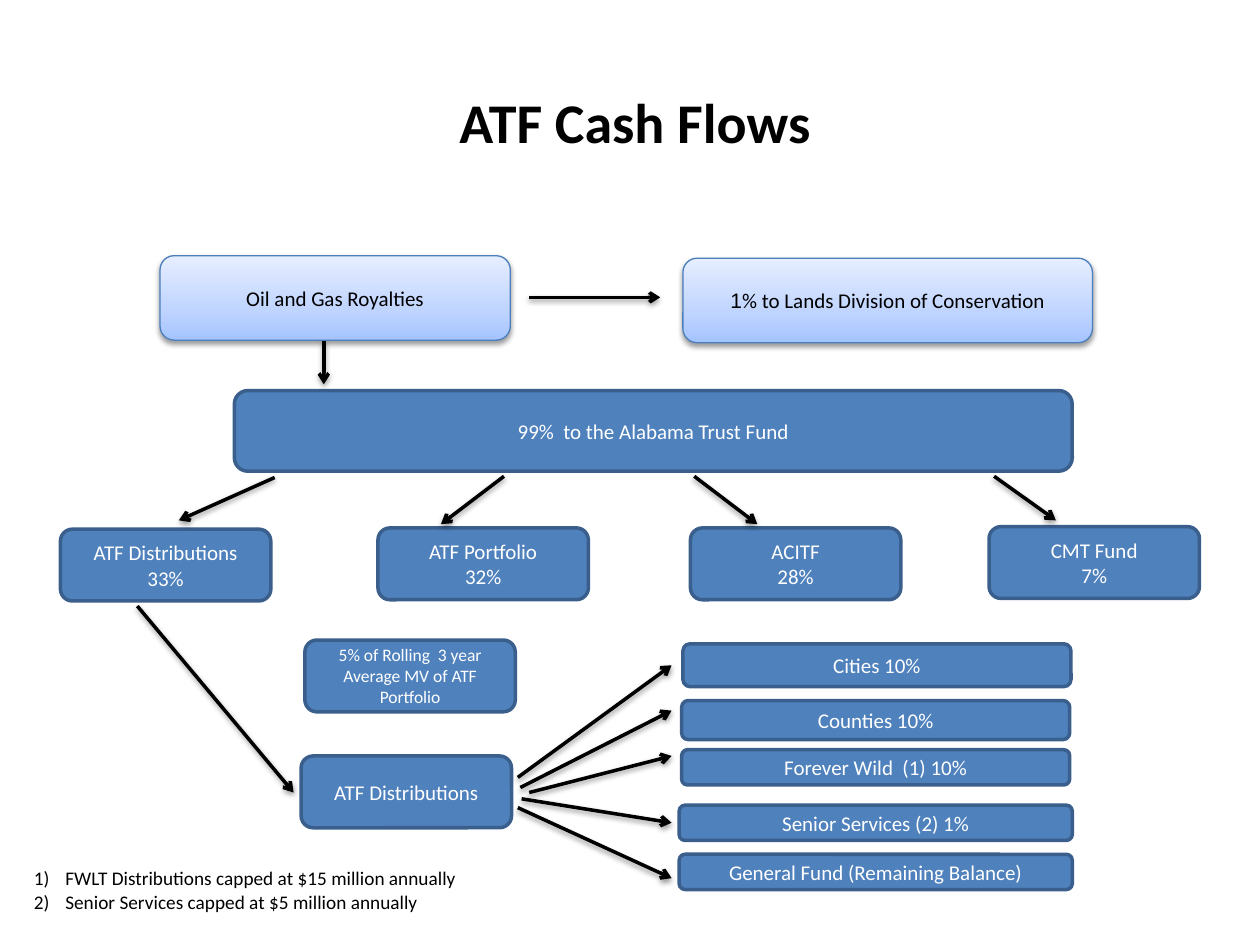
import copy
from dataclasses import dataclass

import lxml.etree
import pptx
import pptx.dml.color
import pptx.enum.dml
import pptx.enum.shapes
import pptx.enum.text
import pptx.oxml
import pptx.oxml.ns
import pptx.util

WIDTH, HEIGHT = pptx.util.Inches(10), pptx.util.Inches(7.5)
COLUMNS, ROWS = 100, 75
BLACK, WHITE, BLUE, NAVY, SKY = "000000", "FFFFFF", "4F81BD", "3A5F8C", "4B7EBC"
SOFT_STOPS = [(0, "A4C4FF"), (0.35, "BFD4FF"), (1, "E6EEFF")]
SHADOW = (
    f'<a:outerShdw {pptx.oxml.ns.nsdecls("a")} blurRad="40000" dist="20000" '
    'dir="5400000" rotWithShape="0"><a:srgbClr val="000000">'
    '<a:alpha val="38000"/></a:srgbClr></a:outerShdw>'
)


@dataclass(frozen=True)
class Box:
    text: str
    left: float
    top: float
    width: float = 16.7
    height: float = 5.7
    size: int = 12
    soft: bool = False
    lead: str = ""


@dataclass(frozen=True)
class Arrow:
    start_column: float
    start_row: float
    end_column: float
    end_row: float


FUND_BOXES = [
    Box("ATF Distributions\n33%", 4.8, 42),
    Box("ATF Portfolio\n32%", 30, 41.9),
    Box("ACITF\n28%", 54.8, 41.9),
    Box("CMT Fund\n7%", 78.5, 41.8),
]
RECIPIENT_BOXES = [
    Box("Cities 10%", 54.2, 51.1, 30.8, 3.4),
    Box("Counties 10%", 54.1, 55.6, 30.8, 3.1),
    Box("Forever Wild  (1) 10%", 54.1, 59.5, 30.8, 2.8),
    Box("Senior Services (2) 1%", 53.9, 63.9, 31.2, 2.8),
    Box("General Fund (Remaining Balance)", 53.9, 67.8, 31.2, 2.8),
]
BOXES = [
    Box("Oil and Gas Royalties", 12.7, 20.3, 27.8, 6.7, soft=True),
    Box("% to Lands Division of Conservation", 54.2, 20.5, 32.5, 6.7, soft=True, lead="1"),
    Box("99%  to the Alabama Trust Fund", 18.6, 31, 66.5, 6.4),
    *FUND_BOXES,
    Box("5% of Rolling  3 year Average MV of ATF Portfolio", 24.2, 50.8, size=10),
    Box("ATF Distributions", 23.9, 60),
    *RECIPIENT_BOXES,
]
ROYALTY_ARROWS = [Arrow(42, 23.6, 52.4, 23.6), Arrow(25.7, 27.1, 25.7, 30.5)]
FUND_ARROWS = [
    Arrow(21.8, 37.9, 14.2, 41.3),
    Arrow(40, 37.8, 35, 41.6),
    Arrow(55.1, 37.8, 60.1, 41.6),
    Arrow(78.9, 37.8, 83.8, 41.3),
]
PAYOUT_ARROW = Arrow(10.9, 48.1, 23.3, 62.9)
RECIPIENT_COLUMN = 53.3
RECIPIENT_ARROWS = [
    Arrow(column, row, RECIPIENT_COLUMN, end_row)
    for column, row, end_row in [
        (41.1, 61.7, 52.8),
        (41.3, 62.5, 56.4),
        (42, 62.9, 60),
        (41.4, 63.4, 65.3),
        (41.1, 64.1, 69.7),
    ]
]


def across(columns: float) -> int:
    return round(WIDTH * columns / COLUMNS)


def down(rows: float) -> int:
    return round(HEIGHT * rows / ROWS)


def color(value: str) -> pptx.dml.color.RGBColor:
    return pptx.dml.color.RGBColor.from_string(value)


def write(frame, text: str, *, size: int, ink: str = BLACK, bold: bool = False,
          centered: bool = True, lead: str = "", numbered: bool = False) -> None:
    frame.word_wrap = True
    for index, line in enumerate(text.split("\n")):
        para = frame.paragraphs[0] if index == 0 else frame.add_paragraph()
        if centered:
            para.alignment = pptx.enum.text.PP_ALIGN.CENTER
        for words, font in [(lead, "Arial"), (line, "Calibri")]:
            if words:
                span = para.add_run()
                span.text = words
                span.font.name = font
                span.font.size = pptx.util.Pt(size)
                span.font.bold = bold
                span.font.color.rgb = color(ink)
        if numbered:
            settings = para._p.get_or_add_pPr()
            indent = pptx.util.Inches(0.25)
            settings.set("marL", str(indent))
            settings.set("indent", str(-indent))
            number = lxml.etree.SubElement(settings, pptx.oxml.ns.qn("a:buAutoNum"))
            number.set("type", "arabicParenR")


def add_shadow(effects) -> None:
    effects.append(pptx.oxml.parse_xml(SHADOW))


def fill_softly(shape) -> None:
    shape.fill.gradient()
    stops = shape._element.spPr.find(".//" + pptx.oxml.ns.qn("a:gsLst"))
    stops.insert(1, copy.deepcopy(stops[0]))
    for stop, (position, value) in zip(shape.fill.gradient_stops, SOFT_STOPS):
        stop.position = position
        stop.color.rgb = color(value)
    shape.fill.gradient_angle = 90


def draw_box(page, box: Box) -> None:
    shape = page.shapes.add_shape(
        pptx.enum.shapes.MSO_SHAPE.ROUNDED_RECTANGLE,
        across(box.left), down(box.top), across(box.width), down(box.height))
    if box.soft:
        fill_softly(shape)
    else:
        shape.fill.solid()
        shape.fill.fore_color.rgb = color(BLUE)
    shape.line.color.rgb = color(SKY if box.soft else NAVY)
    shape.line.width = pptx.util.Pt(0.75 if box.soft else 2)
    shape.shadow.inherit = False
    if box.soft:
        add_shadow(shape._element.spPr.find(pptx.oxml.ns.qn("a:effectLst")))
    shape.text_frame.vertical_anchor = pptx.enum.text.MSO_ANCHOR.MIDDLE
    write(shape.text_frame, box.text, size=box.size,
          ink=BLACK if box.soft else WHITE, lead=box.lead)


def draw_arrow(page, arrow: Arrow) -> None:
    connector = page.shapes.add_connector(
        pptx.enum.shapes.MSO_CONNECTOR.STRAIGHT,
        across(arrow.start_column), down(arrow.start_row),
        across(arrow.end_column), down(arrow.end_row))
    connector.line.color.rgb = color(BLACK)
    connector.line.width = pptx.util.Pt(2)
    properties = connector._element.spPr
    outline = properties.find(pptx.oxml.ns.qn("a:ln"))
    lxml.etree.SubElement(outline, pptx.oxml.ns.qn("a:tailEnd")).set("type", "arrow")
    add_shadow(lxml.etree.SubElement(properties, pptx.oxml.ns.qn("a:effectLst")))


def main() -> None:
    deck = pptx.Presentation()
    deck.slide_width, deck.slide_height = WIDTH, HEIGHT
    page = deck.slides.add_slide(deck.slide_layouts[6])

    title = page.shapes.add_textbox(across(10), down(5), across(80.8), down(9.2))
    title.text_frame.vertical_anchor = pptx.enum.text.MSO_ANCHOR.MIDDLE
    write(title.text_frame, "ATF Cash Flows", size=32, bold=True)

    for box in BOXES:
        draw_box(page, box)
    for arrow in [*ROYALTY_ARROWS, *FUND_ARROWS, PAYOUT_ARROW, *RECIPIENT_ARROWS]:
        draw_arrow(page, arrow)

    notes = page.shapes.add_textbox(across(1.7), down(68.3), across(40.3), down(4.7))
    notes.text_frame.auto_size = pptx.enum.text.MSO_AUTO_SIZE.SHAPE_TO_FIT_TEXT
    write(notes.text_frame,
          "FWLT Distributions capped at $15 million annually\n"
          "Senior Services capped at $5 million annually",
          size=11, centered=False, numbered=True)

    deck.save("out.pptx")


if __name__ == "__main__":
    main()
